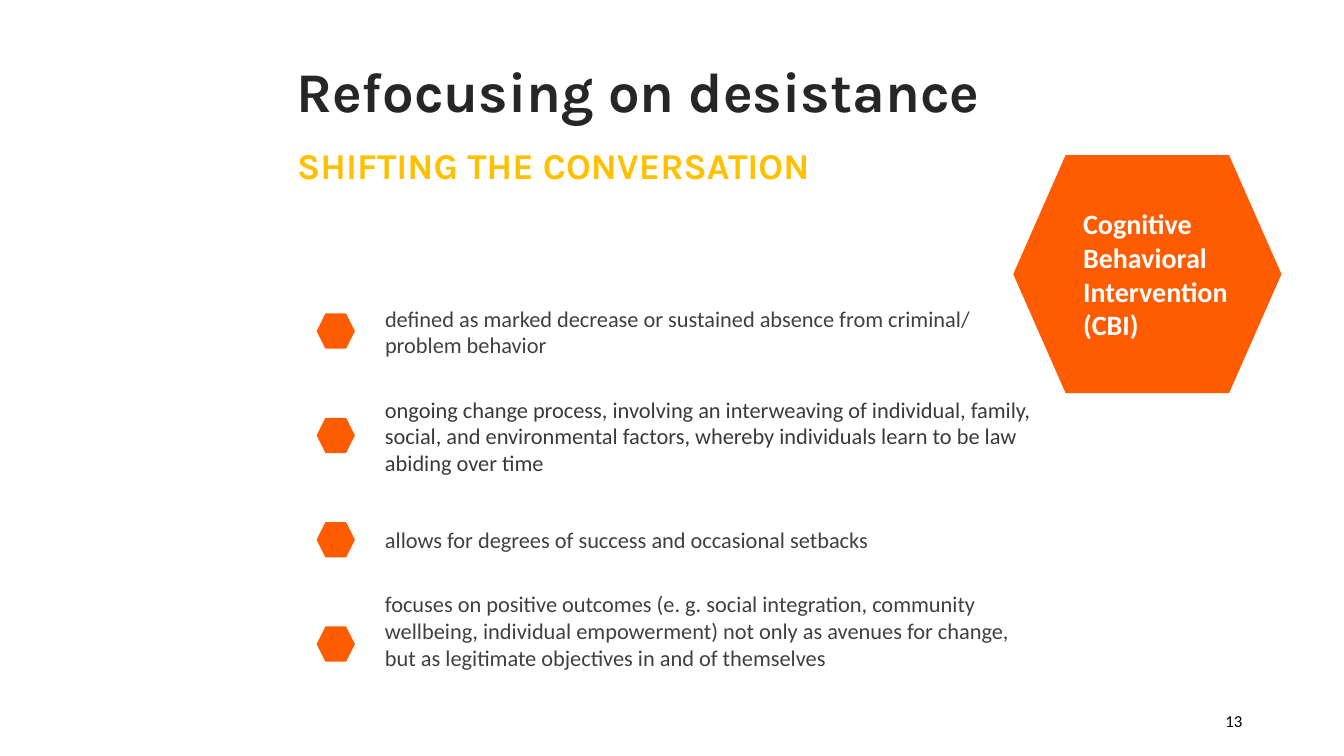
"""Build the slide on refocusing on desistance."""
from pptx import Presentation
from pptx.dml.color import RGBColor
from pptx.enum.shapes import MSO_SHAPE as Shape
from pptx.enum.text import MSO_ANCHOR as Anchor, PP_ALIGN as Align
from pptx.util import Inches, Pt

ORANGE = RGBColor(0xFF, 0x5C, 0x01)
GOLD = RGBColor(0xFF, 0xC0, 0x00)
INK = RGBColor(0x26, 0x26, 0x26)
GREY = RGBColor(0x40, 0x40, 0x40)
DARK = RGBColor(0x3A, 0x3A, 0x3A)
WHITE = RGBColor(0xFF, 0xFF, 0xFF)
BLACK = RGBColor(0, 0, 0)

TITLE = "Refocusing on desistance"
SUBTITLE = "SHIFTING THE CONVERSATION"
BADGE = "Cognitive Behavioral Intervention (CBI)"
PAGE = "13"
POINTS = [
    (["defined as marked decrease or sustained absence from criminal/",
      "problem behavior"], 2.97, 6.89, 0.64, GREY),
    (["ongoing change process, involving an interweaving of individual, family, "
      "social, and environmental factors, whereby individuals learn to be law "
      "abiding over time"], 3.87, 6.7, 0.91, DARK),
    (["allows for degrees of success and occasional setbacks"],
     5.17, 6.5, 0.37, GREY),
    (["focuses on positive outcomes (e. g. social integration, community "
      "wellbeing, individual empowerment) not only as avenues for change, "
      "but as legitimate objectives in and of themselves"],
     5.8, 6.7, 0.91, GREY),
]
MARK_TOP, MARK_STEP = 3.11, 1.035


def write(shape, lines, size, color, font="Calibri", bold=False,
          align=Align.LEFT, anchor=Anchor.TOP):
    frame = shape.text_frame
    frame.word_wrap = True
    frame.vertical_anchor = anchor
    for i, line in enumerate(lines):
        para = frame.paragraphs[0] if i == 0 else frame.add_paragraph()
        para.alignment = align
        run = para.add_run()
        run.text = line
        run.font.name = font
        run.font.size = Pt(size)
        run.font.bold = bold
        run.font.color.rgb = color
    return frame


def main():
    deck = Presentation()
    deck.slide_width, deck.slide_height = Inches(13.33), Inches(7.5)
    slide = deck.slides.add_slide(deck.slide_layouts[6])

    def box(*place):
        return slide.shapes.add_textbox(*map(Inches, place))

    def hexagon(*place):
        shape = slide.shapes.add_shape(Shape.HEXAGON, *map(Inches, place))
        shape.shadow.inherit = False
        shape.fill.solid()
        shape.fill.fore_color.rgb = ORANGE
        shape.line.fill.background()
        return shape

    badge = hexagon(10.05, 1.54, 2.66, 2.36)
    badge.adjustments[0] = 0.22
    frame = write(badge, [BADGE], 20, WHITE, bold=True, anchor=Anchor.MIDDLE)
    frame.paragraphs[0].space_after = Pt(6)
    frame.paragraphs[0]._p.get_or_add_pPr().set("marL", str(Inches(0.2)))

    write(box(2.84, 0.51, 9.88, 0.77), [TITLE], 40, INK, font="Karla", bold=True)
    write(box(2.85, 1.37, 8.24, 0.54), [SUBTITLE], 26, GOLD, font="Karla", bold=True)
    for i, (lines, top, width, height, color) in enumerate(POINTS):
        hexagon(3.14, MARK_TOP + i * MARK_STEP, 0.38, 0.35)
        write(box(3.72, top, width, height), lines, 16, color, anchor=Anchor.MIDDLE)
    write(box(9.42, 6.95, 3, 0.4), [PAGE], 12, BLACK,
          align=Align.RIGHT, anchor=Anchor.MIDDLE)
    deck.save("out.pptx")


if __name__ == "__main__":
    main()
